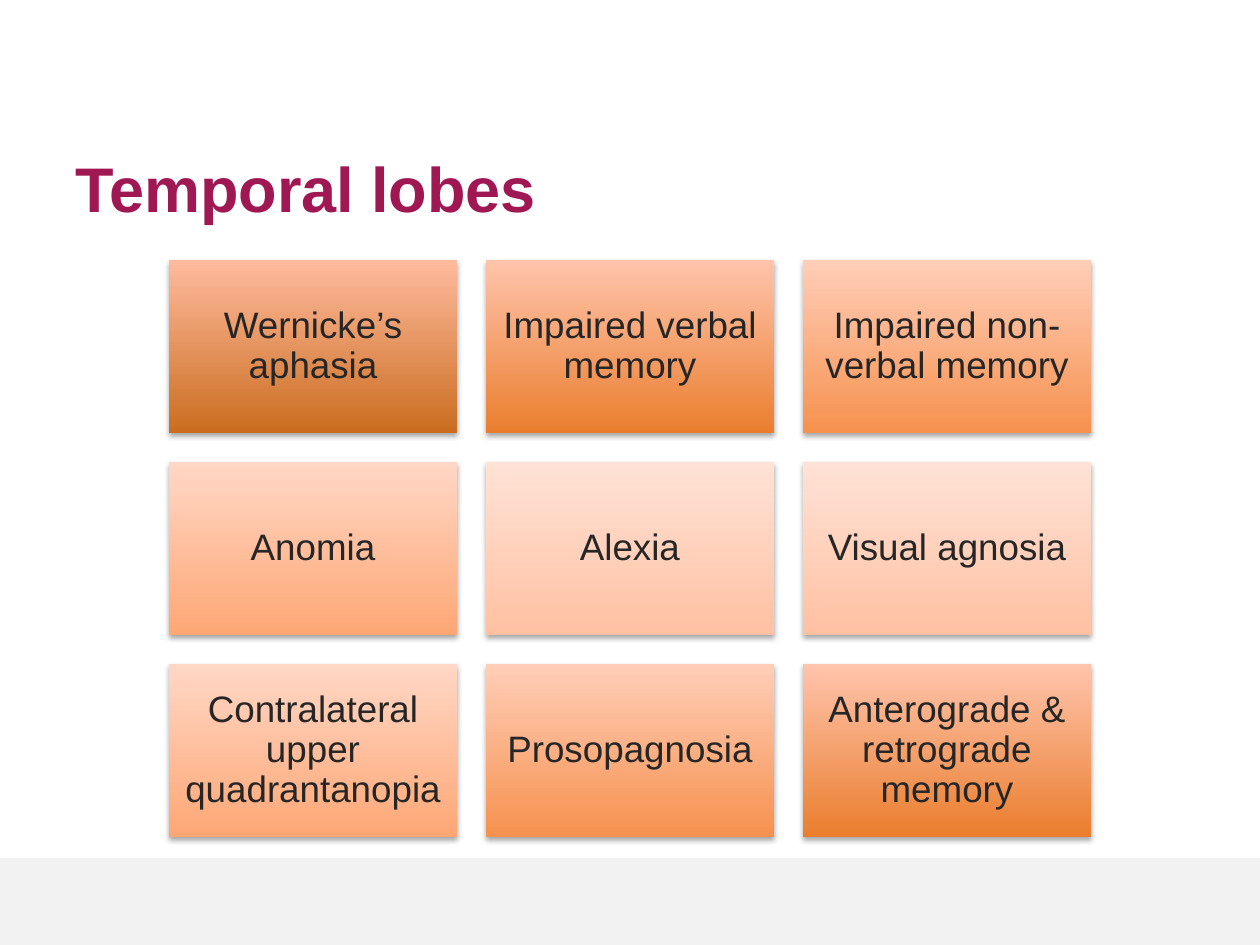
import pptx
import pptx.dml.color
import pptx.enum.shapes
import pptx.enum.text
import pptx.oxml
import pptx.oxml.ns
import pptx.util

TITLE = "Temporal lobes"

# Gradients run from the bottom colour to the top colour.
DEEP = ("CA6D20", "FFBB9E")
STRONG = ("EA7E2E", "FFC4AC")
MEDIUM = ("F6914F", "FFCEB8")
SOFT = ("FEA775", "FFD7C6")
PALE = ("FFC1A2", "FFE2D6")

CARDS = [
    ("Wernicke’s aphasia", DEEP),
    ("Impaired verbal memory", STRONG),
    ("Impaired non-verbal memory", MEDIUM),
    ("Anomia", SOFT),
    ("Alexia", PALE),
    ("Visual agnosia", PALE),
    ("Contralateral upper quadrantanopia", SOFT),
    ("Prosopagnosia", MEDIUM),
    ("Anterograde & retrograde memory", STRONG),
]

SLIDE_WIDTH, SLIDE_HEIGHT = 1260, 945
COLUMNS = 3
CARD_LEFT, CARD_TOP = 169, 260
CARD_WIDTH, CARD_HEIGHT = 288, 173
CARD_GAP = 29
CARD_INSET = 11
FOOTER_TOP = 858

EMU_PER_PX = 914400 // 126

RECTANGLE = pptx.enum.shapes.MSO_SHAPE.RECTANGLE
ALIGN = pptx.enum.text.PP_ALIGN

SHADOW_XML = (
    f'<a:effectLst {pptx.oxml.ns.nsdecls("a")}>'
    '<a:outerShdw blurRad="40000" dist="23000" dir="5400000" rotWithShape="0">'
    '<a:srgbClr val="000000"><a:alpha val="35000"/></a:srgbClr>'
    "</a:outerShdw></a:effectLst>"
)


def px(length):
    return pptx.util.Emu(length * EMU_PER_PX)


def color(value):
    return pptx.dml.color.RGBColor.from_string(value)


def add_rectangle(slide, left, top, width, height):
    shape = slide.shapes.add_shape(RECTANGLE, px(left), px(top), px(width), px(height))
    shape.shadow.inherit = False
    shape.line.fill.background()
    return shape


def write_text(shape, text, size, font_color, bold=False, align=ALIGN.LEFT,
               line_spacing=1.0, inset=None):
    frame = shape.text_frame
    frame.word_wrap = True
    frame.vertical_anchor = pptx.enum.text.MSO_ANCHOR.MIDDLE
    if inset is not None:
        frame.margin_left = frame.margin_right = px(inset)
        frame.margin_top = frame.margin_bottom = px(inset)
    paragraph = frame.paragraphs[0]
    paragraph.alignment = align
    paragraph.line_spacing = line_spacing
    run = paragraph.add_run()
    run.text = text
    run.font.name = "Arial"
    run.font.size = pptx.util.Pt(size)
    run.font.bold = bold
    run.font.color.rgb = color(font_color)


def add_card(slide, index, text, gradient):
    row, column = divmod(index, COLUMNS)
    card = add_rectangle(
        slide,
        CARD_LEFT + column * (CARD_WIDTH + CARD_GAP),
        CARD_TOP + row * (CARD_HEIGHT + CARD_GAP),
        CARD_WIDTH,
        CARD_HEIGHT,
    )
    card.fill.gradient()
    card.fill.gradient_angle = 90
    for stop, stop_color in zip(card.fill.gradient_stops, gradient):
        stop.color.rgb = color(stop_color)
    properties = card.element.spPr
    effects = properties.find(pptx.oxml.ns.qn("a:effectLst"))
    properties.replace(effects, pptx.oxml.parse_xml(SHADOW_XML))
    write_text(card, text, 21, "262626", align=ALIGN.CENTER,
               line_spacing=0.9, inset=CARD_INSET)


def main():
    presentation = pptx.Presentation()
    presentation.slide_width = px(SLIDE_WIDTH)
    presentation.slide_height = px(SLIDE_HEIGHT)
    slide = presentation.slides.add_slide(presentation.slide_layouts[6])

    footer = add_rectangle(slide, 0, FOOTER_TOP, SLIDE_WIDTH, SLIDE_HEIGHT - FOOTER_TOP)
    footer.fill.solid()
    footer.fill.fore_color.rgb = color("F2F2F2")

    title = slide.shapes.add_textbox(px(63), px(141), px(1080), px(93))
    write_text(title, TITLE, 36, "A01853", bold=True)

    for index, (text, gradient) in enumerate(CARDS):
        add_card(slide, index, text, gradient)

    presentation.save("out.pptx")


if __name__ == "__main__":
    main()
